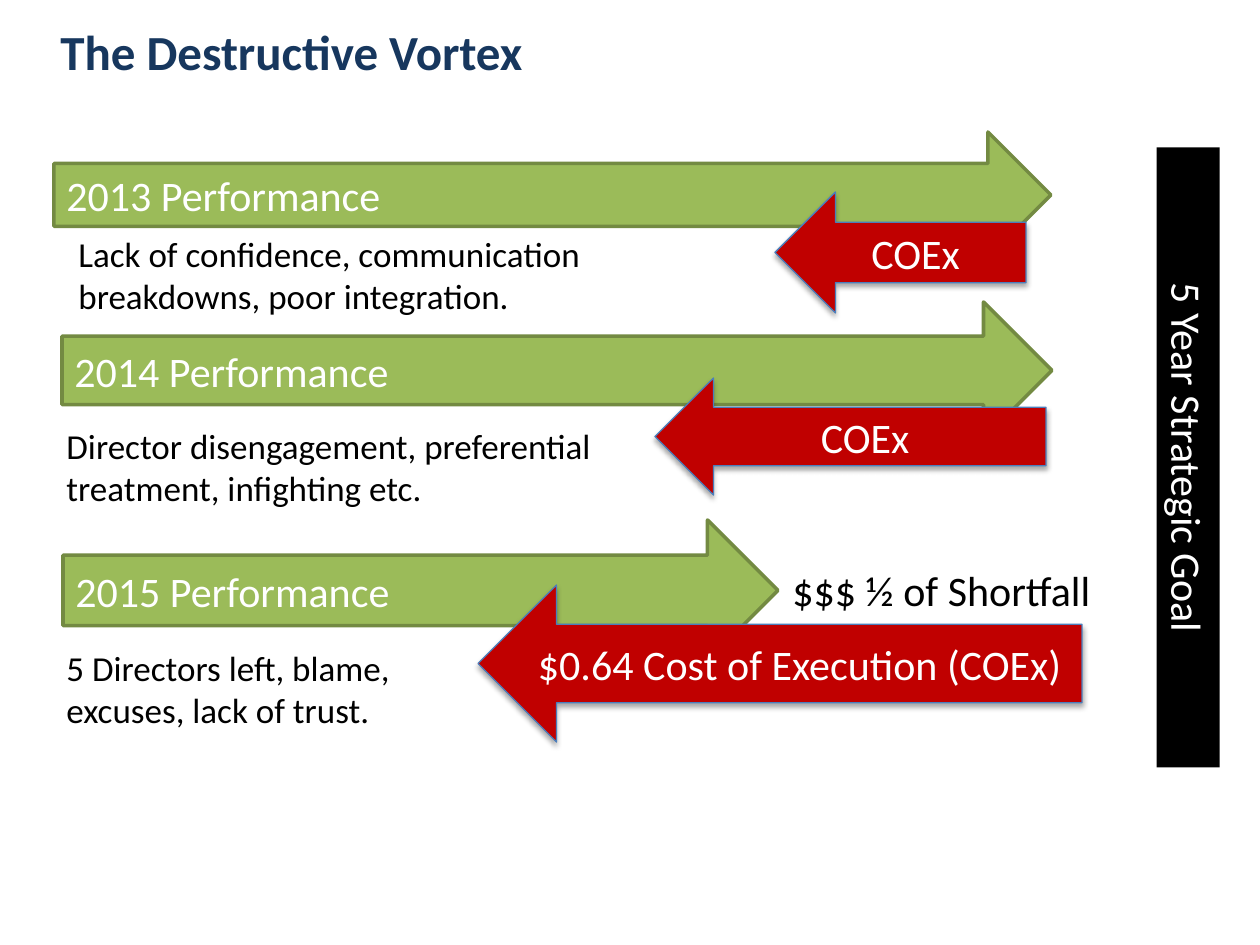
from lxml import etree
from pptx import Presentation
from pptx import util as u
from pptx.dml.color import RGBColor
from pptx.enum import shapes, text
from pptx.oxml.ns import qn

EMU_PER_PX = 914400 / 126

NAVY = RGBColor(0x17, 0x37, 0x5E)
GREEN = RGBColor(0x9B, 0xBB, 0x59)
DARK_GREEN = RGBColor(0x73, 0x8A, 0x42)
RED = RGBColor(0xC0, 0x00, 0x00)
BLUE = RGBColor(0x4B, 0x7E, 0xBC)
BLACK = RGBColor(0, 0, 0)
WHITE = RGBColor(0xFF, 0xFF, 0xFF)

LEFT, CENTER = text.PP_ALIGN.LEFT, text.PP_ALIGN.CENTER
TOP, MIDDLE = text.MSO_ANCHOR.TOP, text.MSO_ANCHOR.MIDDLE

PERFORMANCE_ARROWS = [
    ("2013 Performance", (54, 132, 997, 126)),
    ("2014 Performance", (62, 302, 990, 137)),
    ("2015 Performance", (63, 520, 715, 141)),
]
COST_ARROWS = [
    ("COEx", (775, 192, 251, 121)),
    ("COEx", (655, 378, 391, 117)),
    ("$0.64 Cost of Execution (COEx)", (478, 585, 604, 157)),
]
REASONS = [
    ("Lack of confidence, communication breakdowns, poor integration.",
     (66, 226, 709, 97)),
    ("Director disengagement, preferential treatment, infighting etc.",
     (54, 418, 610, 97)),
    ("5 Directors left, blame, excuses, lack of trust.",
     (54, 640, 450, 97)),
]


def px(value):
    return u.Emu(round(value * EMU_PER_PX))


def set_text(shape, words, size, color, align=LEFT, anchor=TOP, bold=False):
    frame = shape.text_frame
    frame.word_wrap = True
    frame.vertical_anchor = anchor
    frame.text = words
    para = frame.paragraphs[0]
    para.alignment = align
    font = para.runs[0].font
    font.name, font.size, font.bold = "Calibri", u.Pt(size), bold
    font.color.rgb = color


def add_label(slide, words, place, size, color=BLACK, **style):
    box = slide.shapes.add_textbox(*map(px, place))
    set_text(box, words, size, color, **style)


def add_block(slide, kind, words, place, fill, align, anchor):
    """Add a filled preset shape with white text and no shadow."""
    block = slide.shapes.add_shape(kind, *map(px, place))
    block.shadow.inherit = False
    block.fill.solid()
    block.fill.fore_color.rgb = fill
    set_text(block, words, 24, WHITE, align, anchor)
    return block


def set_outline(shape, color, width):
    shape.line.color.rgb = color
    shape.line.width = u.Pt(width)


def add_drop_shadow(shape):
    effects = shape._element.spPr.find(qn("a:effectLst"))
    shadow = etree.SubElement(
        effects, qn("a:outerShdw"), blurRad=str(u.Pt(3.1)),
        dist=str(u.Pt(1.8)), dir="5400000", rotWithShape="0")
    color = etree.SubElement(shadow, qn("a:srgbClr"), val=str(BLACK))
    etree.SubElement(color, qn("a:alpha"), val="35000")


def add_goal_bar(slide):
    bar = add_block(slide, shapes.MSO_SHAPE.RECTANGLE, "5 Year Strategic Goal",
                    (878, 426, 620, 63), BLACK, CENTER, TOP)
    bar.line.fill.background()
    bar.rotation = 90


def add_performance_arrow(slide, words, place):
    arrow = add_block(slide, shapes.MSO_SHAPE.RIGHT_ARROW, words, place,
                      GREEN, LEFT, MIDDLE)
    set_outline(arrow, DARK_GREEN, 2)


def add_cost_arrow(slide, words, place):
    arrow = add_block(slide, shapes.MSO_SHAPE.LEFT_ARROW, words, place,
                      RED, CENTER, MIDDLE)
    set_outline(arrow, BLUE, 0.75)
    add_drop_shadow(arrow)


def main():
    deck = Presentation()
    deck.slide_width, deck.slide_height = px(1260), px(945)
    slide = deck.slides.add_slide(deck.slide_layouts[6])

    add_label(slide, "The Destructive Vortex", (48, 6, 1033, 89), 28, NAVY,
              anchor=MIDDLE, bold=True)
    add_goal_bar(slide)
    for words, place in PERFORMANCE_ARROWS:
        add_performance_arrow(slide, words, place)
    for words, place in COST_ARROWS:
        add_cost_arrow(slide, words, place)
    for words, place in REASONS:
        add_label(slide, words, place, 20)
    add_label(slide, "$$$ ½ of Shortfall", (780, 558, 330, 63), 24)

    deck.save("out.pptx")


if __name__ == "__main__":
    main()
